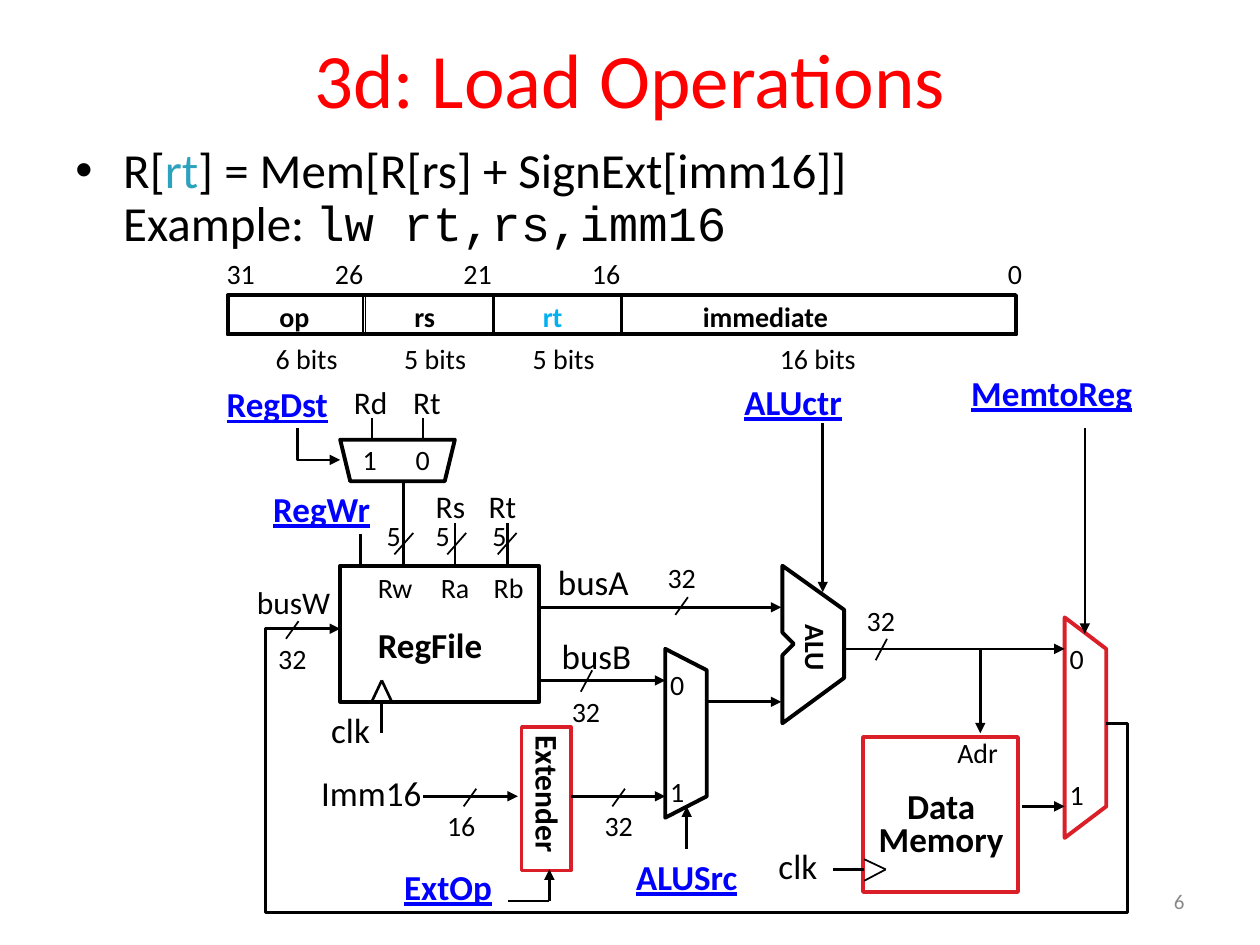
"""Build the load-operation datapath slide."""
import pptx
import pptx.dml.color
import pptx.enum.shapes
import pptx.enum.text
import pptx.oxml
import pptx.oxml.ns
import pptx.util

Inches, Pt = pptx.util.Inches, pptx.util.Pt
RGBColor = pptx.dml.color.RGBColor
ALIGN = pptx.enum.text.PP_ALIGN
ANCHOR = pptx.enum.text.MSO_ANCHOR

BLACK = RGBColor(0, 0, 0)
TITLE_RED = RGBColor(0xFF, 0, 0)
PART_RED = RGBColor(0xDA, 0x1F, 0x28)
CONTROL_BLUE = RGBColor(0, 0, 0xFF)
TEAL = RGBColor(0x2D, 0xA2, 0xBF)
SKY = RGBColor(0, 0xB0, 0xF0)
GRAY = RGBColor(0x89, 0x89, 0x89)

RULE_RUNS = [("R[", BLACK, "Calibri"), ("rt", TEAL, "Calibri"),
             ("] = Mem[R[rs] + SignExt[imm16]]", BLACK, "Calibri"), None,
             ("Example: ", BLACK, "Calibri"), ("lw rt,rs,imm16", BLACK, "Courier New")]

# name, colour, cell (left, width), name (left, width), high bit left, bits label (text, left, width)
FIELDS = [
    ("op", BLACK, (1.8, 1.08), (2.12, 0.44), ("31", 1.7), ("6 bits", 2.09, 0.7)),
    ("rs", BLACK, (2.9, 1.01), (3.19, 0.37), ("26", 2.56), ("5 bits", 3.11, 0.7)),
    ("rt", SKY, (3.92, 1.01), (4.21, 0.37), ("21", 3.58), ("5 bits", 4.13, 0.7)),
    ("immediate", BLACK, (4.94, 3.13), (5.48, 1.21), ("16", 4.6), ("16 bits", 6.09, 0.81)),
]

CONTROLS = [("ALUctr", 5.81, 2.97, 1.14), ("RegWr", 2.07, 3.82, 0.99), ("RegDst", 1.7, 2.99, 1.03),
            ("ALUSrc", 4.95, 6.74, 1.04), ("ExtOp", 3.11, 6.82, 0.9), ("MemtoReg", 7.61, 2.9, 1.49)]
SIGNALS = {
    20: [("clk", 2.53, 5.57, 0.51), ("clk", 6.08, 6.65, 0.51), ("busA", 4.33, 4.4, 0.78),
         ("busB", 4.36, 4.99, 0.77), ("Imm16", 2.45, 6.07, 1)],
    18: [("busW", 1.94, 4.58, 0.79), ("Rs", 3.36, 3.82, 0.44), ("Rt", 3.18, 2.99, 0.43),
         ("Rt", 3.78, 3.82, 0.43), ("Rd", 2.71, 2.99, 0.47)],
    16: [("Rw", 2.9, 4.48, 0.48), ("Ra", 3.4, 4.48, 0.44), ("Rb", 3.82, 4.48, 0.46),
         ("Adr", 7.5, 5.79, 0.54)],
}
BUS_WIDTHS = [("32", 6.78, 4.74), ("32", 2.11, 5.04), ("32", 5.2, 4.4), ("32", 4.44, 5.46),
              ("32", 4.7, 6.37), ("16", 3.45, 6.37)]
DIGITS = [("5", 2.97, 4.07), ("5", 3.36, 4.07), ("5", 3.81, 4.07), ("0", 3.2, 3.46), ("1", 2.78, 3.46),
          ("0", 5.22, 5.25), ("1", 5.22, 6.1), ("0", 8.39, 5.04), ("1", 8.39, 6.12), ("0", 7.9, 1.99)]

BLOCKS = [((2.7, 4.49, 1.58, 1.08), BLACK, 2.25), ((4.14, 5.77, 0.39, 1.14), PART_RED, 2),
          ((6.85, 5.85, 1.23, 1.23), PART_RED, 2.25), ((1.81, 2.34, 6.25, 0.31), BLACK, 2)]
OUTLINES = [
    ([(2.7, 3.49), (2.78, 3.82), (3.53, 3.82), (3.61, 3.49)], BLACK),
    ([(5.28, 5.15), (5.28, 6.49), (5.61, 6.32), (5.61, 5.32)], BLACK),
    ([(6.21, 4.49), (6.21, 5.02), (6.3, 5.11), (6.21, 5.2), (6.21, 5.74), (6.7, 5.38), (6.7, 4.84)], BLACK),
    ([(8.45, 4.9), (8.45, 6.65), (8.78, 6.4), (8.78, 5.15)], PART_RED),
]
BENT_WIRES = [[(2.36, 3.4), (2.36, 3.65), (2.7, 3.65)],
              [(8.78, 5.74), (8.95, 5.74), (8.95, 7.24), (2.11, 7.24), (2.11, 4.99), (2.7, 4.99)]]
ARROWS = [(8.61, 3.4, 8.61, 5.03), (4.28, 4.82, 6.2, 4.82), (6.53, 3.36, 6.53, 4.7),
          (4.28, 5.4, 5.28, 5.4), (5.61, 5.57, 6.2, 5.57), (4.53, 6.32, 5.28, 6.32),
          (3.36, 6.32, 4.11, 6.32), (4.36, 7.15, 4.36, 6.9), (5.45, 6.74, 5.45, 6.4),
          (6.7, 5.15, 8.45, 5.15), (7.78, 5.15, 7.78, 5.82), (8.11, 6.4, 8.45, 6.4)]
WIRES = [(2.86, 4.24, 2.86, 4.49), (3.2, 3.82, 3.2, 4.49), (3.61, 4.15, 3.61, 4.49),
         (4.03, 4.15, 4.03, 4.49), (3.03, 5.4, 2.95, 5.57), (3.03, 5.4, 3.11, 5.57),
         (3.03, 5.57, 3.03, 5.82), (6.86, 6.9, 6.61, 6.9)]
THIN_WIRES = [(6.86, 6.82, 7.03, 6.9), (7.03, 6.9, 6.86, 6.99), (2.95, 3.32, 2.95, 3.49),
              (3.36, 3.32, 3.36, 3.49), (4.36, 7.15, 4.03, 7.15)]
SLASHES = {(0.1, 0.14): [(2.27, 5.07), (5.36, 4.88), (4.86, 6.4), (3.68, 6.4)],
           (0.15, 0.17): [(3.13, 4.4), (3.55, 4.4), (3.95, 4.4)],
           (0.09, 0.17): [(4.61, 5.49), (6.95, 5.24)]}


def add_run(paragraph, text, size, color=BLACK, font="Calibri", bold=False, underline=False):
    run = paragraph.add_run()
    run.text = text
    run.font.size, run.font.name = Pt(size), font
    run.font.bold, run.font.underline = bold, underline
    run.font.color.rgb = color


def add_box(slide, left, top, width, height, wrap=True, anchor=ANCHOR.TOP):
    box = slide.shapes.add_textbox(*map(Inches, (left, top, width, height)))
    box.text_frame.word_wrap = wrap
    box.text_frame.vertical_anchor = anchor
    return box


def add_label(slide, text, left, top, width, size=16, rotation=0, **style):
    box = add_box(slide, left, top, width, {16: 0.37, 18: 0.4, 20: 0.43}[size], wrap=False)
    box.rotation = rotation
    add_run(box.text_frame.paragraphs[0], text, size, **style)


def add_arrowhead(shape):
    line = shape.element.spPr.find(pptx.oxml.ns.qn("a:ln"))
    line.append(pptx.oxml.parse_xml(f'<a:tailEnd {pptx.oxml.ns.nsdecls("a")} type="triangle"/>'))


def style_outline(shape, color, weight):
    shape.fill.background()
    shape.line.color.rgb = color
    shape.line.width = Pt(weight)
    shape.shadow.inherit = False


def add_block(slide, place, color, weight):
    block = slide.shapes.add_shape(pptx.enum.shapes.MSO_SHAPE.RECTANGLE, *map(Inches, place))
    style_outline(block, color, weight)


def add_path(slide, points, color, weight, close):
    start, *rest = [(Inches(x), Inches(y)) for x, y in points]
    builder = slide.shapes.build_freeform(*start)
    builder.add_line_segments(rest, close=close)
    path = builder.convert_to_shape()
    style_outline(path, color, weight)
    return path


def add_wire(slide, ends, weight, arrow=False):
    wire = slide.shapes.add_connector(pptx.enum.shapes.MSO_CONNECTOR.STRAIGHT, *map(Inches, ends))
    wire.line.color.rgb = BLACK
    wire.line.width = Pt(weight)
    if arrow:
        add_arrowhead(wire)
    wire.element.spPr.append(pptx.oxml.parse_xml(f'<a:effectLst {pptx.oxml.ns.nsdecls("a")}/>'))


def add_headings(slide):
    title = add_box(slide, 0.5, -0.01, 9, 1.25, anchor=ANCHOR.MIDDLE).text_frame.paragraphs[0]
    title.alignment = ALIGN.CENTER
    add_run(title, "3d: Load Operations", 44, TITLE_RED)

    rule = add_box(slide, 0.5, 1.11, 9, 4.95).text_frame.paragraphs[0]
    rule.line_spacing = 0.9
    properties = rule._p.get_or_add_pPr()
    properties.set("marL", str(Inches(0.38)))
    properties.set("indent", str(Inches(-0.38)))
    for bullet in ('buFont {} typeface="Arial"', 'buChar {} char="•"'):
        properties.append(pptx.oxml.parse_xml(f'<a:{bullet.format(pptx.oxml.ns.nsdecls("a"))}/>'))
    for part in RULE_RUNS:
        if part is None:
            rule.add_line_break()
        else:
            text, color, font = part
            add_run(rule, text, 28, color, font)

    number = add_box(slide, 7.17, 6.95, 2.33, 0.4, anchor=ANCHOR.MIDDLE).text_frame.paragraphs[0]
    number.alignment = ALIGN.RIGHT
    add_run(number, "6", 12, GRAY)


def add_format(slide):
    for name, color, cell, caption, high_bit, bits in FIELDS:
        add_block(slide, (cell[0], 2.34, cell[1], 0.32), BLACK, 1)
        add_label(slide, name, caption[0], 2.33, caption[1], color=color, bold=True)
        add_label(slide, *high_bit, 1.99, 0.43)
        add_label(slide, bits[0], bits[1], 2.66, bits[2])


def add_datapath(slide):
    for block in BLOCKS:
        add_block(slide, *block)
    for points, color in OUTLINES:
        add_path(slide, points, color, 2.25, True)
    for points in BENT_WIRES:
        add_arrowhead(add_path(slide, points, BLACK, 1.5, False))
    for ends in ARROWS:
        add_wire(slide, ends, 1.5, arrow=True)
    for ends in WIRES:
        add_wire(slide, ends, 1.5)
    for ends in THIN_WIRES:
        add_wire(slide, ends, 1)
    for (run, rise), feet in SLASHES.items():
        for x, y in feet:
            add_wire(slide, (x, y, x + run, y - rise), 1)


def add_names(slide):
    for control in CONTROLS:
        add_label(slide, *control, size=20, color=CONTROL_BLUE, bold=True, underline=True)
    for size, signals in SIGNALS.items():
        for signal in signals:
            add_label(slide, *signal, size=size)
    for labels, width in ((BUS_WIDTHS, 0.43), (DIGITS, 0.31)):
        for label in labels:
            add_label(slide, *label, width)
    add_label(slide, "RegFile", 2.9, 4.9, 1.04, size=20, bold=True)
    add_label(slide, "Extender", 3.76, 6.13, 1.18, size=18, rotation=90, bold=True)
    add_label(slide, "ALU", 6.18, 4.97, 0.59, rotation=90, bold=True)
    memory = add_box(slide, 6.87, 6.24, 1.2, 0.65, wrap=False).text_frame
    memory.add_paragraph()
    for paragraph, word in zip(memory.paragraphs, ("Data", "Memory")):
        paragraph.alignment = ALIGN.CENTER
        paragraph.line_spacing = 0.8
        add_run(paragraph, word, 20, bold=True)


def main():
    deck = pptx.Presentation()
    deck.slide_width, deck.slide_height = Inches(10), Inches(7.5)
    slide = deck.slides.add_slide(deck.slide_layouts[6])
    add_headings(slide)
    add_format(slide)
    add_datapath(slide)
    add_names(slide)
    deck.save("out.pptx")


if __name__ == "__main__":
    main()
